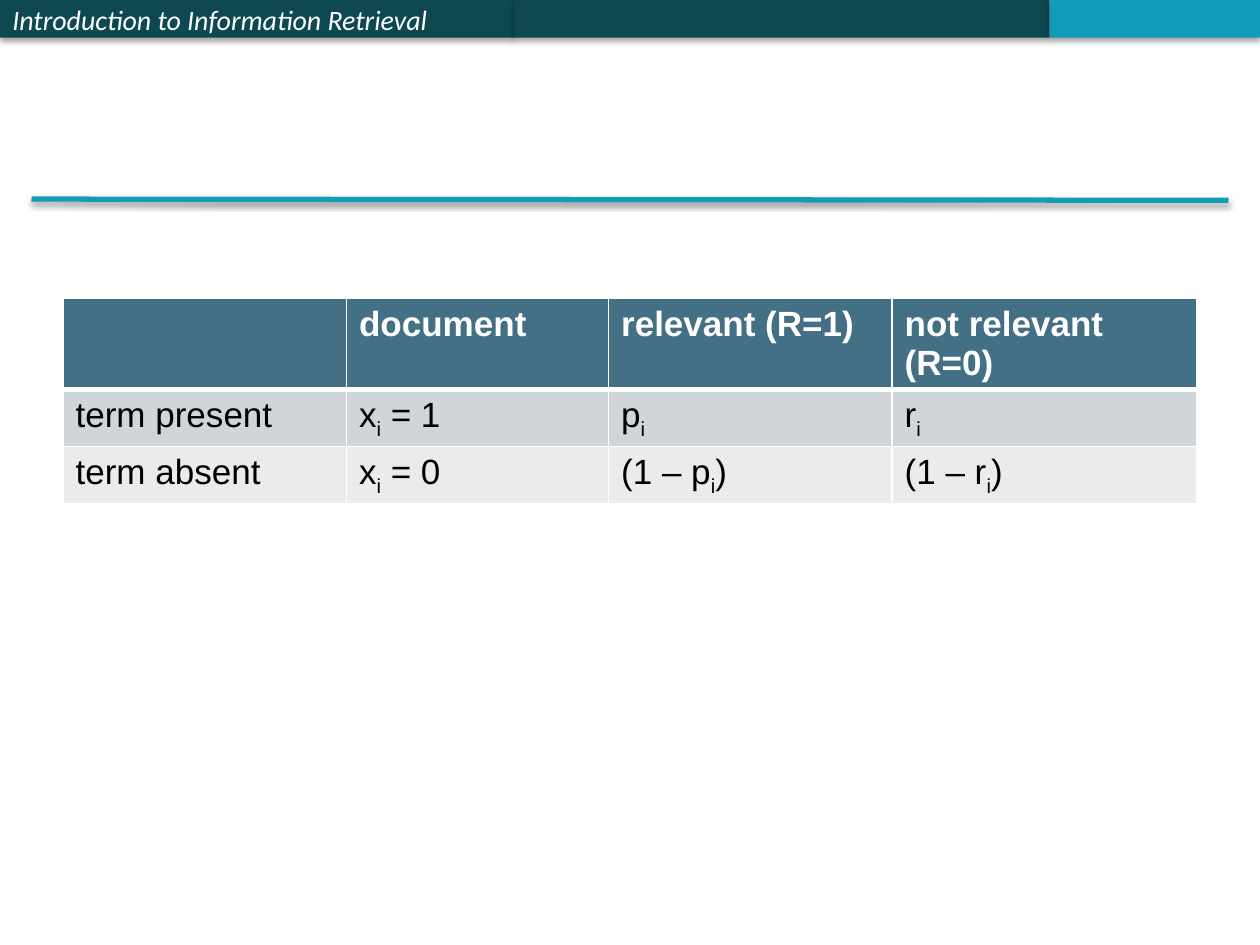
from lxml import etree
from pptx import Presentation
from pptx.dml.color import RGBColor
from pptx.enum import shapes, text
from pptx.oxml import ns
from pptx.util import Inches, Pt

COLORS = {
    "dark": "0E4851",
    "accent": "139CB7",
    "header": "437085",
    "band": "CFD5D9",
    "light": "E9EBED",
    "white": "FFFFFF",
    "black": "000000",
}
ROWS = [
    ["", "document", "relevant (R=1)", "not relevant (R=0)"],
    ["term present", "x_i = 1", "p_i", "r_i"],
    ["term absent", "x_i = 0", "(1 – p_i)", "(1 – r_i)"],
]
ROW_FILLS = ["header", "band", "light"]
COLUMN_WIDTHS = [2.25, 2.08, 2.25, 2.42]


def rgb(name):
    """Return the named colour."""
    return RGBColor.from_string(COLORS[name])


def write_text(frame, content, size=20, font="Arial", color="black", bold=False, italic=False):
    """Write left-aligned text in which the letter after an underscore is a subscript."""
    paragraph = frame.paragraphs[0]
    paragraph.alignment = text.PP_ALIGN.LEFT
    start, *marked = content.split("_")
    pieces = [(start, False)]
    for part in marked:
        pieces += [(part[0], True), (part[1:], False)]
    for piece, subscript in pieces:
        if not piece:
            continue
        run = paragraph.add_run()
        run.text = piece
        run.font.size = Pt(size)
        run.font.name = font
        run.font.bold = bold
        run.font.italic = italic
        run.font.color.rgb = rgb(color)
        if subscript:
            run._r.get_or_add_rPr().set("baseline", "-25000")


def add_shadow(item, opacity, distance):
    """Give a shape or connector a soft shadow that falls straight down."""
    properties = item._element.spPr
    effects = properties.find(ns.qn("a:effectLst"))
    if effects is None:
        effects = etree.SubElement(properties, ns.qn("a:effectLst"))
    shadow = etree.SubElement(
        effects, ns.qn("a:outerShdw"), blurRad=str(Pt(3.1)), dist=str(Pt(distance)),
        dir="5400000", rotWithShape="0")
    color = etree.SubElement(shadow, ns.qn("a:srgbClr"), val=COLORS["black"])
    etree.SubElement(color, ns.qn("a:alpha"), val=str(opacity * 1000))


def set_borders(cell, bottom):
    """Draw white borders round a cell, with its own width at the bottom."""
    properties = cell._tc.get_or_add_tcPr()
    for side, width in (("L", 1), ("R", 1), ("T", 1), ("B", bottom)):
        border = etree.SubElement(properties, ns.qn(f"a:ln{side}"), w=str(Pt(width)))
        fill = etree.SubElement(border, ns.qn("a:solidFill"))
        etree.SubElement(fill, ns.qn("a:srgbClr"), val=COLORS["white"])


def add_course_bar(slide, left, top, height):
    """Add the three-part bar with the course title."""
    segments = [(4.08, "dark", "Introduction to Information Retrieval"),
                (4.25, "dark", ""), (1.67, "accent", "")]
    for width, color, title in segments:
        segment = slide.shapes.add_shape(
            shapes.MSO_SHAPE.RECTANGLE, Inches(left), Inches(top), Inches(width), Inches(height))
        segment.fill.solid()
        segment.fill.fore_color.rgb = rgb(color)
        segment.line.fill.background()
        segment.shadow.inherit = False
        add_shadow(segment, 35, 1.8)
        if title:
            segment.text_frame.vertical_anchor = text.MSO_ANCHOR.MIDDLE
            write_text(segment.text_frame, title, size=16, font="Calibri", color="white", italic=True)
        left += width


def add_title_rule(slide, left, top, width, height):
    """Add the line under the title area."""
    rule = slide.shapes.add_connector(
        shapes.MSO_CONNECTOR.STRAIGHT, Inches(left), Inches(top),
        Inches(left + width), Inches(top + height))
    rule.line.color.rgb = rgb("accent")
    rule.line.width = Pt(3)
    add_shadow(rule, 38, 1.6)


def add_probability_table(slide, left, top, width, row_height):
    """Add the table of term probabilities."""
    table = slide.shapes.add_table(
        len(ROWS), len(COLUMN_WIDTHS), Inches(left), Inches(top),
        Inches(width), Inches(row_height * len(ROWS))).table
    for column, column_width in zip(table.columns, COLUMN_WIDTHS):
        column.width = Inches(column_width)
    for row_index, (row, fill) in enumerate(zip(ROWS, ROW_FILLS)):
        table.rows[row_index].height = Inches(row_height)
        is_header = row_index == 0
        for column_index, content in enumerate(row):
            cell = table.cell(row_index, column_index)
            set_borders(cell, bottom=3 if is_header else 1)
            cell.fill.solid()
            cell.fill.fore_color.rgb = rgb(fill)
            write_text(cell.text_frame, content, bold=is_header,
                       color="white" if is_header else "black")


def main():
    """Build the slide and save it."""
    deck = Presentation()
    deck.slide_width, deck.slide_height = Inches(10), Inches(7.5)
    slide = deck.slides.add_slide(deck.slide_layouts[6])
    add_course_bar(slide, 0, 0, 0.3)
    add_title_rule(slide, 0.25, 1.58, 9.5, 0.01)
    add_probability_table(slide, 0.5, 2.37, 9, 0.41)
    deck.save("out.pptx")


if __name__ == "__main__":
    main()
